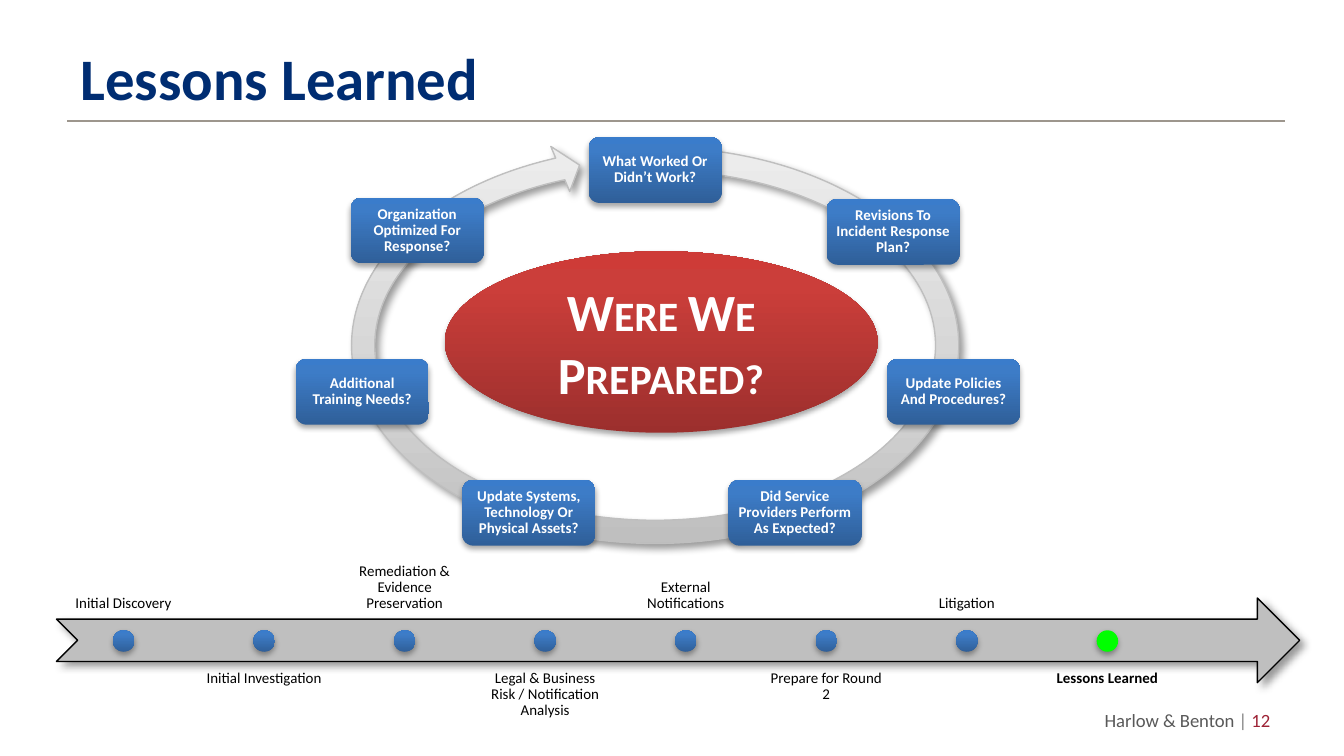
from dataclasses import dataclass

from lxml import etree
from pptx import Presentation
from pptx import util as u
from pptx.dml.color import RGBColor
from pptx.enum import shapes, text
from pptx.oxml.ns import qn

FONT = "Calibri"
BLUE = ((0, "2F5F99"), (80, "3D7CC7"), (100, "3A7CCB"))
RED = ((0, "9C2F2D"), (80, "CB3E3A"), (100, "CE3B37"))
GRAY = ((0, "BDBDBD"), (35, "D1D1D1"), (100, "EEEEEE"))
TOP, MIDDLE, BOTTOM = (text.MSO_ANCHOR.TOP, text.MSO_ANCHOR.MIDDLE,
                       text.MSO_ANCHOR.BOTTOM)
LEFT, CENTER, RIGHT = text.PP_ALIGN.LEFT, text.PP_ALIGN.CENTER, text.PP_ALIGN.RIGHT


@dataclass(frozen=True)
class Shadow:
    """Outer shadow: opacity in percent, blur and distance in points, angle in degrees."""
    opacity: int
    blur: float
    distance: float
    angle: int


@dataclass(frozen=True)
class Question:
    """One rounded box on the cycle."""
    label: str
    left: float
    top: float


SOFT = Shadow(35, 3.1, 1.8, 90)
DIAGONAL = Shadow(40, 4, 3, 45)

QUESTIONS = (
    Question("What Worked Or Didn’t Work?", 4.38, 1.02),
    Question("Revisions To Incident Response Plan?", 6.15, 1.48),
    Question("Update Policies And Procedures?", 6.6, 2.67),
    Question("Did Service Providers Perform As Expected?", 5.42, 3.57),
    Question("Update Systems, Technology Or Physical Assets?", 3.44, 3.57),
    Question("Additional Training Needs?", 2.2, 2.67),
    Question("Organization Optimized For Response?", 2.61, 1.47),
)
MILESTONES = (
    "Initial Discovery",
    "Initial Investigation",
    "Remediation & Evidence Preservation",
    "Legal & Business Risk / Notification Analysis",
    "External Notifications",
    "Prepare for Round 2",
    "Litigation",
    "Lessons Learned",
)


def color(value: str) -> RGBColor:
    """Turn a hex string into a colour."""
    return RGBColor.from_string(value)


def box(left: float, top: float, width: float, height: float) -> tuple:
    """Return a rectangle in inches."""
    return tuple(u.Inches(length) for length in (left, top, width, height))


def write(shape, *runs, size, bold=False, align=CENTER, anchor=MIDDLE,
          inset=None, spacing=None, small_caps=False) -> None:
    """Write (text, colour) runs into one paragraph of a shape."""
    frame = shape.text_frame
    frame.word_wrap = True
    frame.vertical_anchor = anchor
    if inset is not None:
        frame.margin_left = frame.margin_right = u.Inches(inset)
        frame.margin_top = frame.margin_bottom = u.Inches(inset)
    paragraph = frame.paragraphs[0]
    paragraph.alignment = align
    if spacing:
        paragraph.line_spacing = spacing
    for words, hue in runs:
        run = paragraph.add_run()
        run.text = words
        run.font.name = FONT
        run.font.size = u.Pt(size)
        run.font.bold = bold
        run.font.color.rgb = color(hue)
        if small_caps:
            run.font._element.set("cap", "small")


def fill_gradient(shape, stops: tuple) -> None:
    """Fill a shape with colour stops running from bottom to top."""
    shape.fill.gradient()
    shape.fill.gradient_angle = 90
    stop_list = shape._element.spPr.find(".//" + qn("a:gsLst"))
    for stop in list(stop_list):
        stop_list.remove(stop)
    for position, hue in stops:
        stop = etree.SubElement(stop_list, qn("a:gs"), pos=str(position * 1000))
        etree.SubElement(stop, qn("a:srgbClr"), val=hue)


def add_shadow(shape, shadow: Shadow) -> None:
    """Give a shape an outer black shadow."""
    shape.shadow.inherit = False
    effects = shape._element.spPr.find(qn("a:effectLst"))
    outer = etree.SubElement(
        effects, qn("a:outerShdw"), blurRad=str(u.Pt(shadow.blur)),
        dist=str(u.Pt(shadow.distance)), dir=str(shadow.angle * 60000), rotWithShape="0")
    black = etree.SubElement(outer, qn("a:srgbClr"), val="000000")
    etree.SubElement(black, qn("a:alpha"), val=str(shadow.opacity * 1000))


def add_figure(slide, kind, place: tuple, fill, shadow: Shadow, line: str = ""):
    """Add a preset shape with a solid or gradient fill."""
    shape = slide.shapes.add_shape(kind, *place)
    if isinstance(fill, str):
        shape.fill.solid()
        shape.fill.fore_color.rgb = color(fill)
    else:
        fill_gradient(shape, fill)
    if line:
        shape.line.color.rgb = color(line)
        shape.line.width = u.Pt(0.75)
    else:
        shape.line.fill.background()
    add_shadow(shape, shadow)
    return shape


def add_header(slide) -> None:
    """Add the title and the rule below it."""
    title = slide.shapes.title
    title.left, title.top, title.width, title.height = box(0.5, 0.23, 9.08, 0.68)
    write(title, ("Lessons Learned", "002D72"), size=31.5, bold=True, align=LEFT)
    rule = slide.shapes.add_connector(
        shapes.MSO_CONNECTOR.STRAIGHT, *box(0.5, 0.9, 9.56, 0.9))
    rule.line.color.rgb = color("9D968D")
    rule.line.width = u.Pt(0.75)
    etree.SubElement(rule._element.spPr, qn("a:effectLst"))


def add_timeline(slide) -> None:
    """Add the arrow with milestones labelled above and below in turn."""
    left, pitch = 0.42, 7.32 / 7
    add_figure(slide, shapes.MSO_SHAPE.NOTCHED_RIGHT_ARROW,
               box(left, 4.45, 9.25, 0.63), "BFBFBF", DIAGONAL, "000000")
    for index, milestone in enumerate(MILESTONES):
        current = index == len(MILESTONES) - 1
        above = index % 2 == 0
        start = left + index * pitch
        label = slide.shapes.add_textbox(*box(start, 3.98 if above else 4.93, 1, 0.63))
        write(label, (milestone, "000000"), size=8, bold=current, inset=0.06,
              anchor=BOTTOM if above else TOP, spacing=0.9)
        add_figure(slide, shapes.MSO_SHAPE.OVAL, box(start + 0.42, 4.69, 0.16, 0.16),
                   "00FF00" if current else BLUE, SOFT)


def add_cycle(slide) -> None:
    """Add the circular arrow, its questions and the central ellipse."""
    ring = add_figure(slide, shapes.MSO_SHAPE.CIRCULAR_ARROW,
                      box(2.52, 1, 4.71, 3.14), GRAY, DIAGONAL, "BFBFBF")
    for index, value in enumerate((0.055, 3.307, 145.033, 169.574, 0.058)):
        ring.adjustments[index] = value
    for question in QUESTIONS:
        card = add_figure(slide, shapes.MSO_SHAPE.ROUNDED_RECTANGLE,
                          box(question.left, question.top, 0.99, 0.49), BLUE, SOFT)
        write(card, (question.label, "FFFFFF"), size=8, bold=True, inset=0.04, spacing=0.9)
    center = add_figure(slide, shapes.MSO_SHAPE.OVAL, box(3.31, 1.87, 3.22, 1.35), RED, SOFT)
    write(center, ("Were We Prepared?", "FFFFFF"), size=28, bold=True, small_caps=True)


def main() -> None:
    """Build and save the slide."""
    presentation = Presentation()
    presentation.slide_width = u.Inches(10)
    presentation.slide_height = u.Inches(10 * 9 / 16)
    slide = presentation.slides.add_slide(presentation.slide_layouts[5])
    add_header(slide)
    footer = slide.shapes.add_textbox(*box(7.22, 5.22, 2.33, 0.27))
    write(footer, ("Harlow & Benton ", "595959"), ("| ", "808080"), ("12", "9D2235"),
          size=10, align=RIGHT)
    add_timeline(slide)
    add_cycle(slide)
    presentation.save("out.pptx")


if __name__ == "__main__":
    main()
